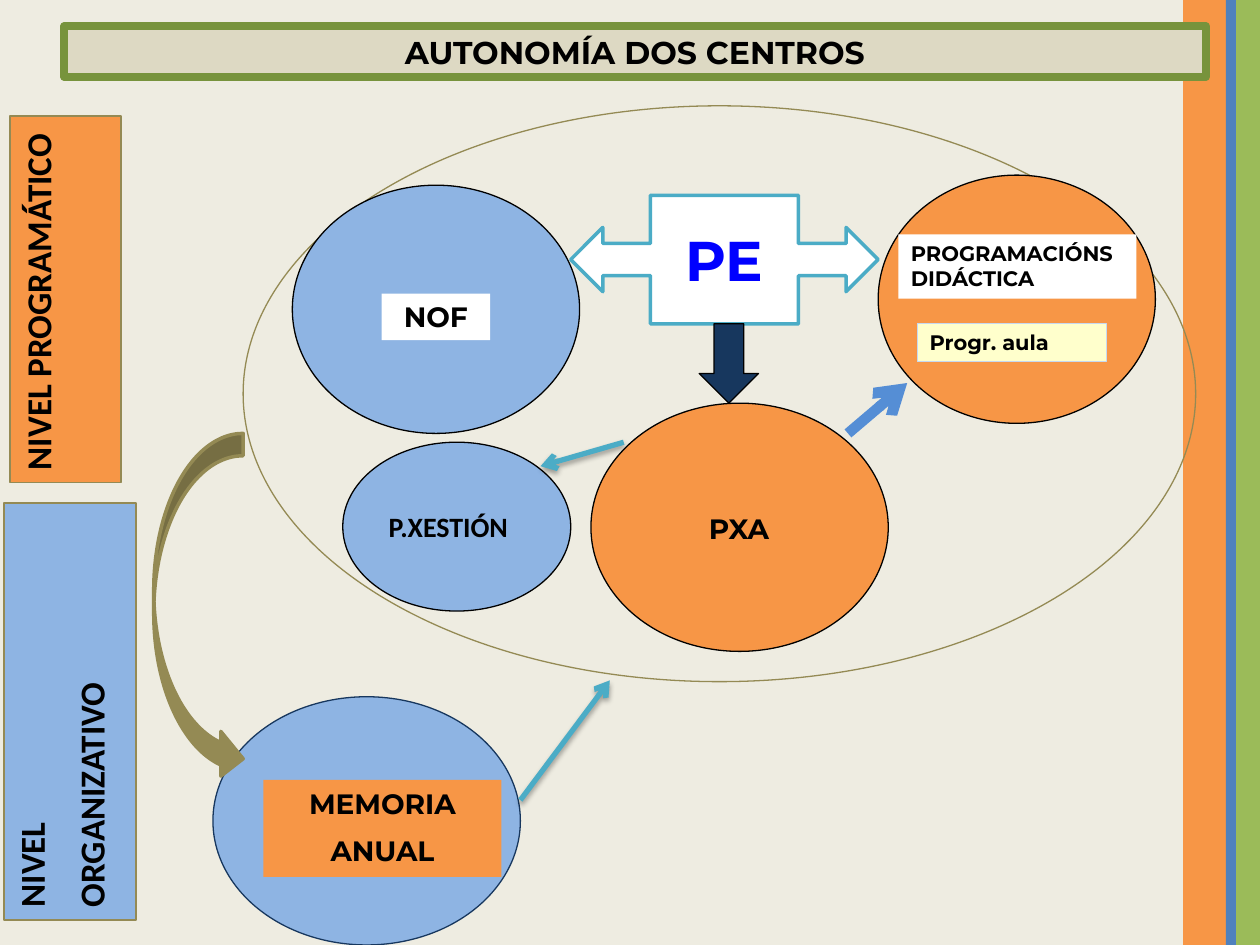
from dataclasses import dataclass
from typing import Optional

import pptx
import pptx.dml.color
import pptx.enum.shapes
import pptx.enum.text
import pptx.oxml
import pptx.oxml.ns
import pptx.util

Inches = pptx.util.Inches
Pt = pptx.util.Pt
Shape = pptx.enum.shapes.MSO_SHAPE
Align = pptx.enum.text.PP_ALIGN
Anchor = pptx.enum.text.MSO_ANCHOR
AutoSize = pptx.enum.text.MSO_AUTO_SIZE


@dataclass(frozen=True)
class Theme:
    background: str = "EEECE1"
    orange: str = "F79646"
    blue: str = "8EB4E3"
    arrow_blue: str = "558ED5"
    stripe_blue: str = "4F81BD"
    stripe_green: str = "9BBB59"
    olive: str = "948A54"
    title_fill: str = "DDD9C3"
    title_line: str = "77933C"
    teal: str = "4BACC6"
    navy: str = "17375E"
    cream: str = "FFFFCC"
    pale_blue: str = "C6D9F1"
    white: str = "FFFFFF"
    black: str = "000000"
    pe_blue: str = "0000FF"
    font: str = "Montserrat"
    level_font: str = "Calibri"
    small: int = 12
    label: int = 16
    title: int = 18
    level: int = 20
    big: int = 32


T = Theme()


@dataclass(frozen=True)
class Box:
    x: float
    y: float
    w: float
    h: float
    fill: Optional[str] = None
    line: Optional[str] = None
    weight: float = 0.75
    kind: int = Shape.RECTANGLE
    rotation: int = 0


@dataclass(frozen=True)
class Arrow:
    x1: float
    y1: float
    x2: float
    y2: float
    color: str = T.teal
    weight: float = 3
    shadow: bool = True


def rgb(color: str):
    return pptx.dml.color.RGBColor.from_string(color)


def draw_box(s, box: Box):
    sp = s.shapes.add_shape(box.kind, Inches(box.x), Inches(box.y),
                            Inches(box.w), Inches(box.h))
    sp.shadow.inherit = False
    sp.rotation = box.rotation
    if box.fill:
        sp.fill.solid()
        sp.fill.fore_color.rgb = rgb(box.fill)
    else:
        sp.fill.background()
    if box.line:
        sp.line.color.rgb = rgb(box.line)
        sp.line.width = Pt(box.weight)
    else:
        sp.line.fill.background()
    return sp


def write(sp, text: str, *, size: int = T.label, font: str = T.font,
          color: str = T.black, align=Align.CENTER, anchor=Anchor.TOP,
          wrap: bool = True, vertical: bool = False) -> None:
    """Write one paragraph per line, half a line apart."""
    tf = sp.text_frame
    tf.word_wrap = wrap
    tf.vertical_anchor = anchor
    tf.auto_size = AutoSize.SHAPE_TO_FIT_TEXT if wrap else AutoSize.NONE
    if vertical:
        tf._txBody.bodyPr.set("vert", "eaVert")
    for i, line in enumerate(text.split("\n")):
        p = tf.add_paragraph() if i else tf.paragraphs[0]
        p.alignment = align
        if i:
            p.space_before = Pt(size / 2)
        r = p.add_run()
        r.text = line
        r.font.size = Pt(size)
        r.font.name = font
        r.font.bold = True
        r.font.color.rgb = rgb(color)


def draw_arrow(s, arrow: Arrow) -> None:
    c = s.shapes.add_connector(
        pptx.enum.shapes.MSO_CONNECTOR.STRAIGHT, Inches(arrow.x1),
        Inches(arrow.y1), Inches(arrow.x2), Inches(arrow.y2))
    c.line.color.rgb = rgb(arrow.color)
    c.line.width = Pt(arrow.weight)
    ns = pptx.oxml.ns.nsdecls("a")
    c.line._get_or_add_ln().append(
        pptx.oxml.parse_xml(f'<a:tailEnd {ns} type="arrow"/>'))
    shadow = (f'<a:outerShdw blurRad="{Pt(3.1)}" dist="{Pt(1.8)}" dir="5400000">'
              f'<a:srgbClr val="{T.black}"><a:alpha val="35000"/></a:srgbClr>'
              '</a:outerShdw>') if arrow.shadow else ""
    c._element.spPr.append(
        pptx.oxml.parse_xml(f"<a:effectLst {ns}>{shadow}</a:effectLst>"))


def ellipse(x: float, y: float, w: float, h: float,
            fill: Optional[str], line: str = T.black) -> Box:
    return Box(x, y, w, h, fill, line, kind=Shape.OVAL)


def draw_frame(s) -> None:
    """Side stripes, level labels and title."""
    for x, w, color in ((9.39, 0.35, T.orange), (9.81, 0.19, T.stripe_green),
                        (9.73, 0.08, T.stripe_blue)):
        draw_box(s, Box(x, 0, w, 7.5, color))
    levels = (
        (Box(0.08, 0.92, 0.88, 2.91, T.orange, T.olive, 1, rotation=180),
         "NIVEL PROGRAMÁTICO"),
        (Box(0.03, 3.99, 1.05, 3.31, T.blue, T.olive, 1, rotation=180),
         "NIVEL\nORGANIZATIVO"),
    )
    for box, text in levels:
        write(draw_box(s, box), text, size=T.level, font=T.level_font,
              align=Align.LEFT, vertical=True)
    title = draw_box(s, Box(0.51, 0.21, 9.06, 0.4, T.title_fill, T.title_line, 4.5))
    write(title, "AUTONOMÍA DOS CENTROS", size=T.title)


def draw_plans(s) -> None:
    """Plan ellipses with their labels."""
    draw_box(s, ellipse(1.93, 0.84, 7.56, 4.57, None, T.olive))

    draw_box(s, ellipse(6.97, 1.39, 2.2, 1.97, T.orange))
    for box, text in (
            (Box(7.13, 1.86, 1.89, 0.51, T.white), "PROGRAMACIÓNS DIDÁCTICA"),
            (Box(7.28, 2.57, 1.5, 0.3, T.cream, T.pale_blue), "Progr. aula")):
        write(draw_box(s, box), text, size=T.small, align=Align.LEFT)

    pxa = draw_box(s, ellipse(4.69, 3.2, 2.36, 1.97, T.orange))
    pxa_label = draw_box(s, Box(4.92, 4.01, 1.89, 0.37, T.orange))
    write(pxa_label, "PXA")
    s.shapes.add_group_shape([pxa, pxa_label])

    for oval, label, text in (
            (ellipse(1.69, 5.53, 2.44, 1.97, T.blue, T.navy),
             Box(2.09, 6.19, 1.89, 0.77, T.orange), "MEMORIA\nANUAL"),
            (ellipse(2.32, 1.47, 2.28, 1.97, T.blue),
             Box(3.03, 2.33, 0.86, 0.37, T.white), "NOF")):
        draw_box(s, oval)
        write(draw_box(s, label), text)

    pe = draw_box(s, Box(4.53, 1.55, 2.44, 1.02, T.white, T.teal, 2,
                         Shape.LEFT_RIGHT_ARROW_CALLOUT))
    write(pe, "PE", size=T.big, color=T.pe_blue, anchor=Anchor.MIDDLE, wrap=False)
    management = draw_box(s, ellipse(2.72, 3.51, 1.81, 1.34, T.blue))
    write(management, "P.XESTIÓN", font=T.level_font, align=Align.LEFT,
          anchor=Anchor.MIDDLE, wrap=False)


def draw_flow(s) -> None:
    draw_box(s, Box(5.55, 2.57, 0.47, 0.63, T.navy, T.black, kind=Shape.DOWN_ARROW))
    draw_box(s, Box(1.22, 3.44, 0.71, 2.76, T.olive, T.olive, 2,
                    Shape.CURVED_RIGHT_ARROW))
    for arrow in (Arrow(6.73, 3.44, 7.2, 3.04, T.arrow_blue, 6, shadow=False),
                  Arrow(4.95, 3.51, 4.29, 3.7),
                  Arrow(4.13, 6.35, 4.84, 5.4)):
        draw_arrow(s, arrow)


def main() -> None:
    prs = pptx.Presentation()
    prs.slide_width, prs.slide_height = Inches(10), Inches(7.5)
    s = prs.slides.add_slide(prs.slide_layouts[6])
    s.background.fill.solid()
    s.background.fill.fore_color.rgb = rgb(T.background)
    draw_frame(s)
    draw_plans(s)
    draw_flow(s)
    prs.save("out.pptx")


if __name__ == "__main__":
    main()
